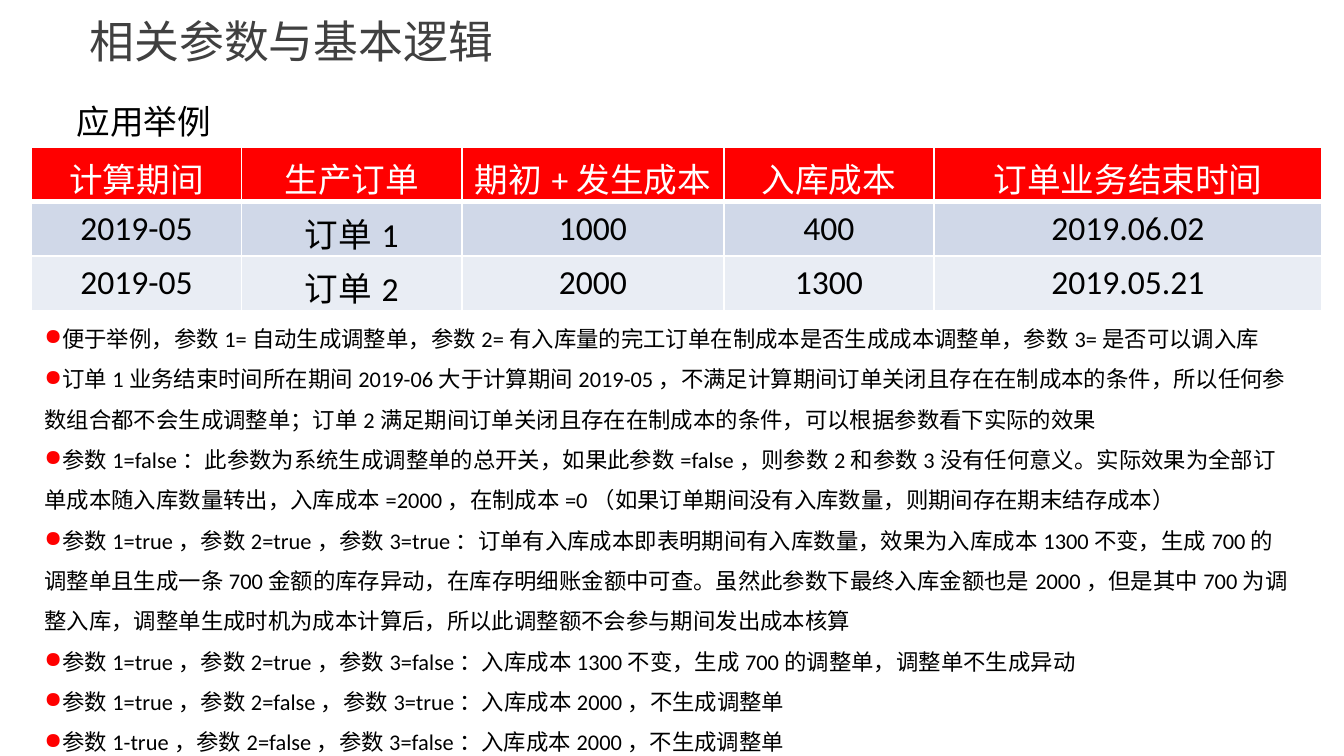
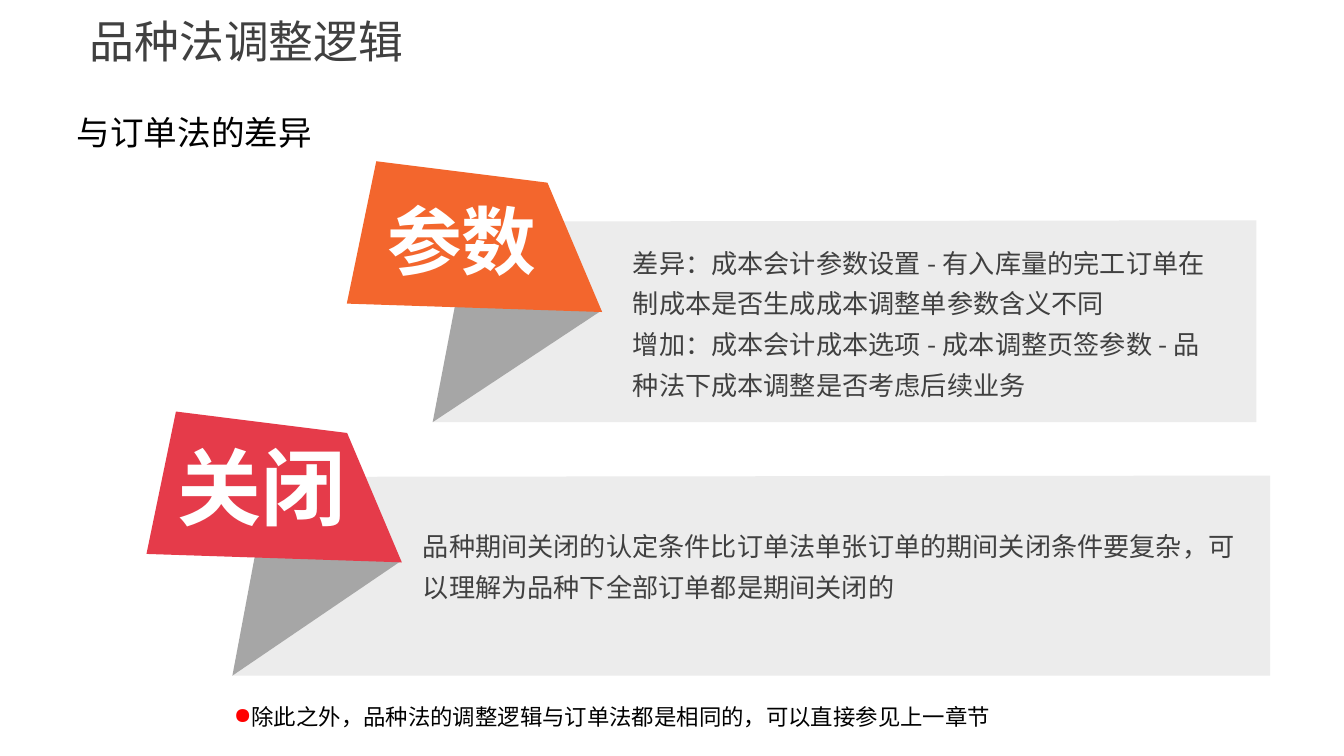
from dataclasses import dataclass

from lxml import etree
from pptx import Presentation
from pptx.dml.color import RGBColor
from pptx.enum import text
from pptx.oxml import ns
from pptx.util import Pt


@dataclass(frozen=True)
class Theme:
    ink: str = "000000"
    grey: str = "404040"
    white: str = "FFFFFF"
    red: str = "FF0000"
    bands: tuple = ("D0D8E8", "E9EDF4")
    panel: str = "D9D9D9"
    tail: str = "A6A6A6"
    orange: str = "F3662D"
    crimson: str = "E53B4A"
    body_font: str = "Calibri"
    cjk_font: str = "Noto Sans CJK SC"
    tag_font: str = "Arial"
    title_size: int = 24
    heading_size: int = 18
    panel_size: int = 14
    note_size: int = 12


THEME = Theme()

HEADER = ["计算期间", "生产订单", "期初+发生成本", "入库成本", "订单业务结束时间"]
ORDERS = [
    ["2019-05", "订单1", "1000", "400", "2019.06.02"],
    ["2019-05", "订单2", "2000", "1300", "2019.05.21"],
]
COLUMN_WIDTHS = [112.5, 118, 140.5, 112.5, 208]

EXAMPLE_NOTES = [
    "便于举例，参数1=自动生成调整单，参数2=有入库量的完工订单在制成本是否生成成本调整单，参数3=是否可以调入库",
    "订单1业务结束时间所在期间2019-06大于计算期间2019-05，不满足计算期间订单关闭且存在在制成本的条件，"
    "所以任何参数组合都不会生成调整单；订单2满足期间订单关闭且存在在制成本的条件，可以根据参数看下实际的效果",
    "参数1=false：此参数为系统生成调整单的总开关，如果此参数=false，则参数2和参数3没有任何意义。"
    "实际效果为全部订单成本随入库数量转出，入库成本=2000，在制成本=0（如果订单期间没有入库数量，则期间存在期末结存成本）",
    "参数1=true，参数2=true，参数3=true：订单有入库成本即表明期间有入库数量，效果为入库成本1300不变，"
    "生成700的调整单且生成一条700金额的库存异动，在库存明细账金额中可查。虽然此参数下最终入库金额也是2000，"
    "但是其中700为调整入库，调整单生成时机为成本计算后，所以此调整额不会参与期间发出成本核算",
    "参数1=true，参数2=true，参数3=false：入库成本1300不变，生成700的调整单，调整单不生成异动",
    "参数1=true，参数2=false，参数3=true：入库成本2000，不生成调整单",
    "参数1-true，参数2=false，参数3=false：入库成本2000，不生成调整单",
]
PARAMETER_TEXT = [
    "差异：成本会计参数设置-有入库量的完工订单在制成本是否生成成本调整单参数含义不同",
    "增加：成本会计成本选项-成本调整页签参数-品种法下成本调整是否考虑后续业务",
]
CLOSING_TEXT = ["品种期间关闭的认定条件比订单法单张订单的期间关闭条件要复杂，可以理解为品种下全部订单都是期间关闭的"]
CLOSING_NOTE = ["除此之外，品种法的调整逻辑与订单法都是相同的，可以直接参见上一章节"]


def rgb(color):
    return RGBColor.from_string(color)


def add_child(parent, tag, **attributes):
    return etree.SubElement(parent, ns.qn(tag), attributes)


def add_bullet(paragraph):
    paragraph.level = 1
    properties = paragraph._p.get_or_add_pPr()
    properties.set("marL", "0")
    properties.set("indent", "0")
    add_child(add_child(properties, "a:buClr"), "a:srgbClr", val=THEME.red)
    add_child(properties, "a:buChar", char="●")


def write(frame, lines, size=THEME.heading_size, color=THEME.ink, font=THEME.body_font,
          bold=False, align=None, spacing=None, bullet=False):
    """Fill a text frame with one paragraph per line."""
    for index, line in enumerate(lines):
        paragraph = frame.add_paragraph() if index else frame.paragraphs[0]
        if spacing:
            paragraph.line_spacing = spacing
        if bullet:
            add_bullet(paragraph)
        if align is not None:
            paragraph.alignment = align
        run = paragraph.add_run()
        run.text = line
        run.font.name = font
        run.font.size = Pt(size)
        run.font.bold = bold
        run.font.color.rgb = rgb(color)


def add_text(slide, box, lines, wrap=True, anchor=text.MSO_ANCHOR.TOP, **style):
    frame = slide.shapes.add_textbox(*map(Pt, box)).text_frame
    frame.word_wrap = wrap
    frame.vertical_anchor = anchor
    write(frame, lines, **style)
    return frame


def add_titled_slide(presentation, title, heading, heading_top):
    slide = presentation.slides.add_slide(presentation.slide_layouts[6])
    add_text(slide, (41, 2, 648, 39.5), [title], anchor=text.MSO_ANCHOR.MIDDLE,
             size=THEME.title_size, color=THEME.grey, font=THEME.cjk_font)
    add_text(slide, (34, heading_top, 428, 29), [heading])
    return slide


def add_notes(slide, box, lines):
    add_text(slide, box, lines, size=THEME.note_size, spacing=1.5, bullet=True)


def add_borders(cell, bottom):
    properties = cell._tc.get_or_add_tcPr()
    for side, width in (("L", 1), ("R", 1), ("T", 1), ("B", bottom)):
        line = add_child(properties, f"a:ln{side}", w=str(Pt(width)))
        add_child(add_child(line, "a:solidFill"), "a:srgbClr", val=THEME.white)


def add_order_table(slide, left, top, row_height):
    rows = [HEADER, *ORDERS]
    table = slide.shapes.add_table(len(rows), len(HEADER), Pt(left), Pt(top),
                                   Pt(sum(COLUMN_WIDTHS)), Pt(row_height * len(rows))).table
    for column, width in zip(table.columns, COLUMN_WIDTHS):
        column.width = Pt(width)
    for row_index, values in enumerate(rows):
        table.rows[row_index].height = Pt(row_height)
        is_header = row_index == 0
        fill = THEME.red if is_header else THEME.bands[row_index - 1]
        for column_index, value in enumerate(values):
            cell = table.cell(row_index, column_index)
            cell.margin_left = cell.margin_right = Pt(3)
            if not is_header and column_index < 2:
                cell.vertical_anchor = text.MSO_ANCHOR.MIDDLE
            add_borders(cell, bottom=3 if is_header else 1)
            cell.fill.solid()
            cell.fill.fore_color.rgb = rgb(fill)
            write(cell.text_frame, [value], align=text.PP_ALIGN.CENTER,
                  color=THEME.white if is_header else THEME.ink)


def add_polygon(slide, points, color, opacity=None):
    points = [(Pt(x), Pt(y)) for x, y in points]
    builder = slide.shapes.build_freeform(*points[0])
    builder.add_line_segments(points[1:], close=True)
    shape = builder.convert_to_shape()
    shape.shadow.inherit = False
    shape.line.fill.background()
    shape.fill.solid()
    shape.fill.fore_color.rgb = rgb(color)
    if opacity:
        color_node = shape._element.spPr.find(".//" + ns.qn("a:srgbClr"))
        add_child(color_node, "a:alpha", val=str(opacity * 1000))


def add_ribbon(slide, left, top, panel_start, panel_right, panel_bottom, color):
    """Pale panel, folded tail and slanted tag, placed by the tag's corner."""
    tip = (left + 46, panel_bottom)
    panel_top = top + panel_start[1]
    add_polygon(slide, [(left + panel_start[0], panel_top), (panel_right, panel_top - 0.7),
                        (panel_right, panel_bottom), tip], THEME.panel, opacity=49)
    add_polygon(slide, [(left + 136.5, top + 80), (left + 61.5, top + 59), tip], THEME.tail)
    tag = [(15.8, 0), (107.5, 11.5), (136.8, 80.8), (0, 76.3)]
    add_polygon(slide, [(left + x, top + y) for x, y in tag], color)


def add_tag_label(slide, box, label, size):
    frame = add_text(slide, box, [label], wrap=False, size=size, bold=True,
                     color=THEME.white, font=THEME.tag_font)
    frame.margin_left = frame.margin_right = Pt(5)
    frame.margin_top = frame.margin_bottom = Pt(2.7)


def add_panel_text(slide, box, lines):
    add_text(slide, box, lines, size=THEME.panel_size, color=THEME.grey,
             font=THEME.cjk_font, spacing=1.3)


def build_example_slide(presentation):
    slide = add_titled_slide(presentation, "相关参数与基本逻辑", "应用举例", 50.5)
    add_notes(slide, (16.7, 163.5, 680.5, 247), EXAMPLE_NOTES)
    add_order_table(slide, 16.9, 78.7, 29.2)


def build_difference_slide(presentation):
    slide = add_titled_slide(presentation, "品种法调整逻辑", "与订单法的差异", 56.5)
    add_ribbon(slide, 185.8, 86.4, (80, 32.3), 673, 226.2, THEME.orange)
    add_ribbon(slide, 78.5, 220.5, (87.8, 35), 680.5, 362, THEME.crimson)
    add_tag_label(slide, (202.5, 101.5, 91.5, 54), "参数", 40)
    add_tag_label(slide, (90, 230.5, 101.5, 60), "关闭", 45)
    add_panel_text(slide, (219.5, 275.8, 456, 51), CLOSING_TEXT)
    add_panel_text(slide, (332, 123.8, 329, 96), PARAMETER_TEXT)
    add_notes(slide, (118.2, 366, 590.5, 29), CLOSING_NOTE)


def main():
    presentation = Presentation()
    presentation.slide_width = Pt(720)
    presentation.slide_height = Pt(405)
    build_example_slide(presentation)
    build_difference_slide(presentation)
    presentation.save("out.pptx")


if __name__ == "__main__":
    main()
